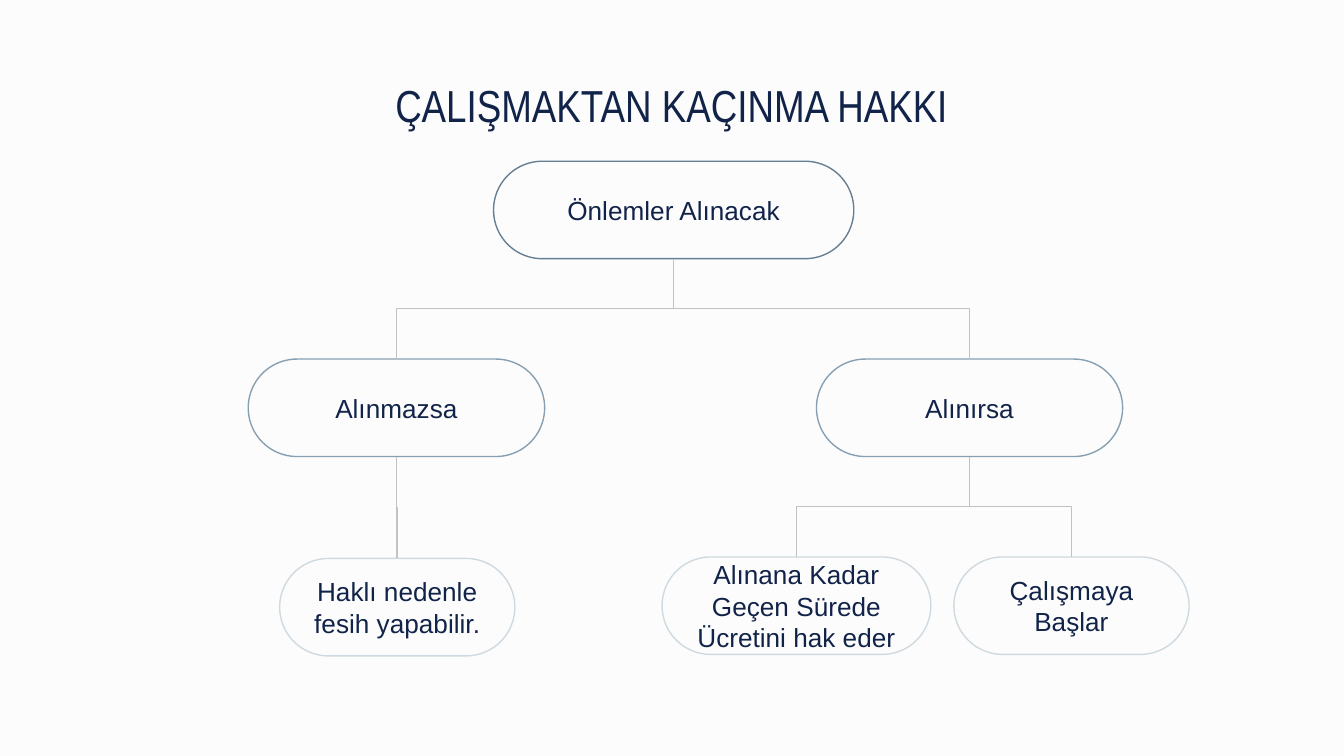
from dataclasses import dataclass

from lxml.etree import SubElement
from pptx import Presentation
from pptx.dml.color import RGBColor as RGB
from pptx.enum.shapes import MSO_CONNECTOR, MSO_SHAPE
from pptx.enum.text import MSO_ANCHOR, MSO_AUTO_SIZE, PP_ALIGN
from pptx.oxml.ns import qn
from pptx.util import Pt


@dataclass(frozen=True)
class Theme:
    background: RGB = RGB.from_string("FCFCFC")
    ink: RGB = RGB.from_string("112349")
    link: RGB = RGB.from_string("C2C2C2")
    levels: tuple = tuple(RGB.from_string(c) for c in ("667E92", "869FB1", "CFD9E0"))
    title_font: str = "Arial Narrow"
    body_font: str = "Arial"
    title_size: int = 24
    body_size: int = 14
    line: float = 0.75
    inset: float = 7.2


# Tree layout in points
FIRST_TOP, LEVEL_STEP, NODE_HEIGHT = 86.4, 106, 52.2
BOTTOM_SITE, TOP_SITE = 2, 0


class TreeSlide:
    def __init__(self, deck, theme):
        self.theme = theme
        self.slide = deck.slides.add_slide(deck.slide_layouts[0])
        fill = self.slide.background.fill
        fill.solid()
        fill.fore_color.rgb = theme.background
        subtitle = self.slide.placeholders[1].element
        subtitle.getparent().remove(subtitle)

    def label(self, shape, text, font, size):
        frame = shape.text_frame
        frame.text = text
        frame.word_wrap = True
        frame.auto_size = MSO_AUTO_SIZE.NONE
        frame.vertical_anchor = MSO_ANCHOR.MIDDLE
        frame.margin_left = frame.margin_right = Pt(self.theme.inset)
        frame.margin_top = frame.margin_bottom = Pt(self.theme.inset)
        for paragraph in frame.paragraphs:
            paragraph.alignment = PP_ALIGN.CENTER
            for run in paragraph.runs:
                run.font.name = font
                run.font.size = Pt(size)
                run.font.color.rgb = self.theme.ink

    def title(self, text, left, top, width, height):
        heading = self.slide.shapes.title
        heading.left, heading.top = Pt(left), Pt(top)
        heading.width, heading.height = Pt(width), Pt(height)
        self.label(heading, text, self.theme.title_font, self.theme.title_size)

    def node(self, text, level, left, width, drop=0):
        top = FIRST_TOP + LEVEL_STEP * level + drop
        pill = self.slide.shapes.add_shape(
            MSO_SHAPE.ROUNDED_RECTANGLE, Pt(left), Pt(top), Pt(width), Pt(NODE_HEIGHT))
        pill.adjustments[0] = 0.5
        pill.shadow.inherit = False
        pill.fill.background()
        pill.line.color.rgb = self.theme.levels[level]
        pill.line.width = Pt(self.theme.line)
        self.label(pill, text, self.theme.body_font, self.theme.body_size)
        return pill

    def branch(self, parent, child):
        elbow = self.slide.shapes.add_connector(MSO_CONNECTOR.ELBOW, 0, 0, 0, 0)
        elbow.begin_connect(parent, BOTTOM_SITE)
        elbow.end_connect(child, TOP_SITE)
        elbow.line.color.rgb = self.theme.link
        elbow.line.width = Pt(self.theme.line)
        properties = elbow._element.spPr
        SubElement(properties, qn("a:effectLst"))

        # Turn the elbow a quarter so that it leaves the parent downwards
        start_x, end_x = (n.left + n.width // 2 for n in (parent, child))
        start_y, end_y = parent.top + parent.height, child.top
        rise, run = end_y - start_y, abs(end_x - start_x)
        elbow.left = (start_x + end_x - rise) // 2
        elbow.top = (start_y + end_y - run) // 2
        elbow.width, elbow.height = rise, run
        to_right = end_x > start_x
        frame = properties.find(qn("a:xfrm"))
        frame.rot = 270 if to_right else 90
        frame.flipH, frame.flipV = to_right, False


def main():
    deck = Presentation()
    deck.slide_width, deck.slide_height = Pt(720), Pt(405)
    tree = TreeSlide(deck, Theme())

    # Heading
    tree.title("ÇALIŞMAKTAN KAÇINMA HAKKI", 108, 33.1, 503.5, 45.4)

    # Decision tree
    measures = tree.node("Önlemler Alınacak", 0, 264.4, 193)
    not_taken = tree.node("Alınmazsa", 1, 133, 158.8)
    taken = tree.node("Alınırsa", 1, 437.4, 164)
    termination = tree.node("Haklı nedenle fesih yapabilir.", 2, 149.8, 126, drop=0.8)
    wages = tree.node("Alınana Kadar Geçen Sürede Ücretini hak eder", 2, 354.7, 144)
    resume = tree.node("Çalışmaya Başlar", 2, 511, 126)

    # Branches
    for parent, child in ((measures, not_taken), (measures, taken),
                          (not_taken, termination), (taken, wages), (taken, resume)):
        tree.branch(parent, child)

    deck.save("out.pptx")


if __name__ == "__main__":
    main()
